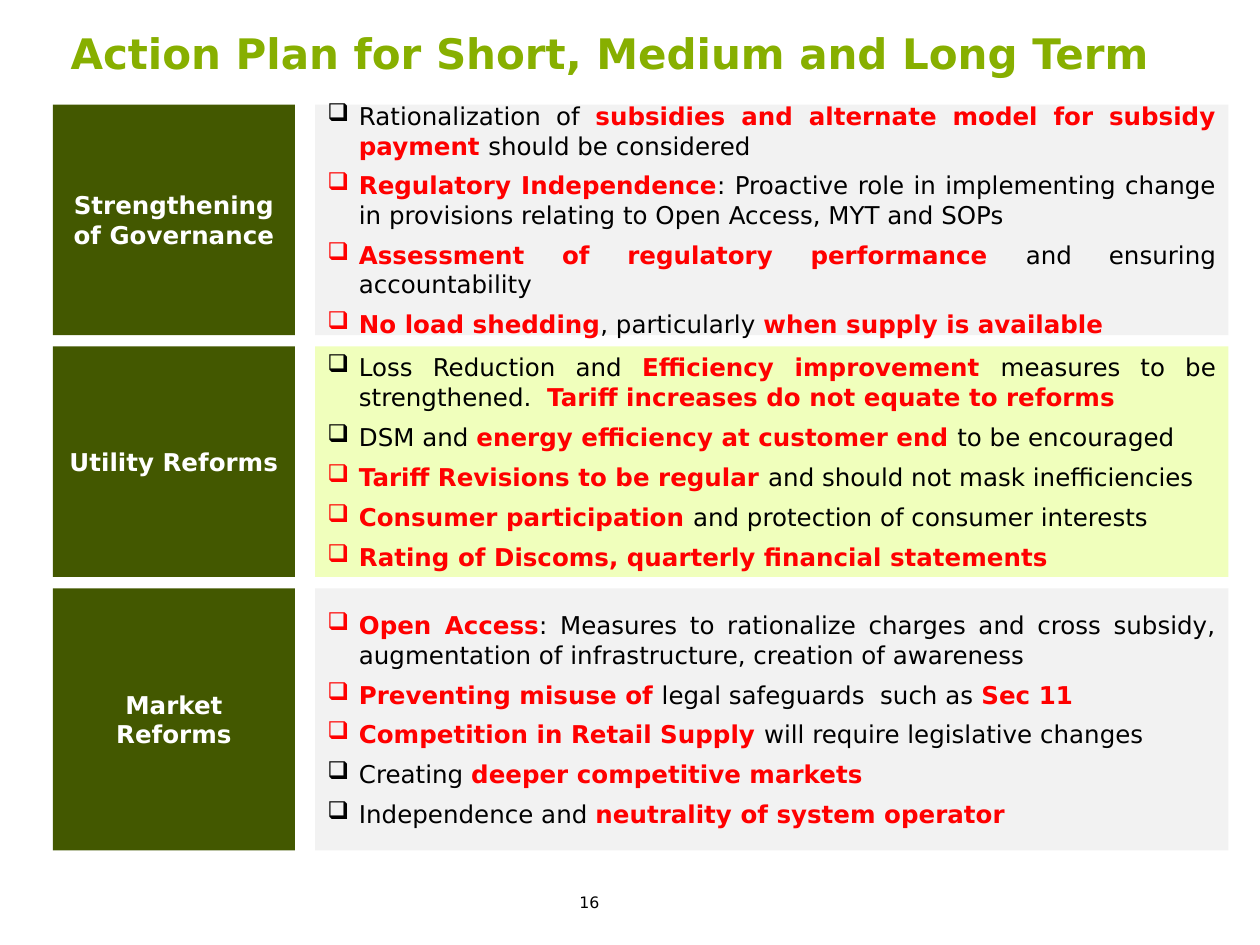
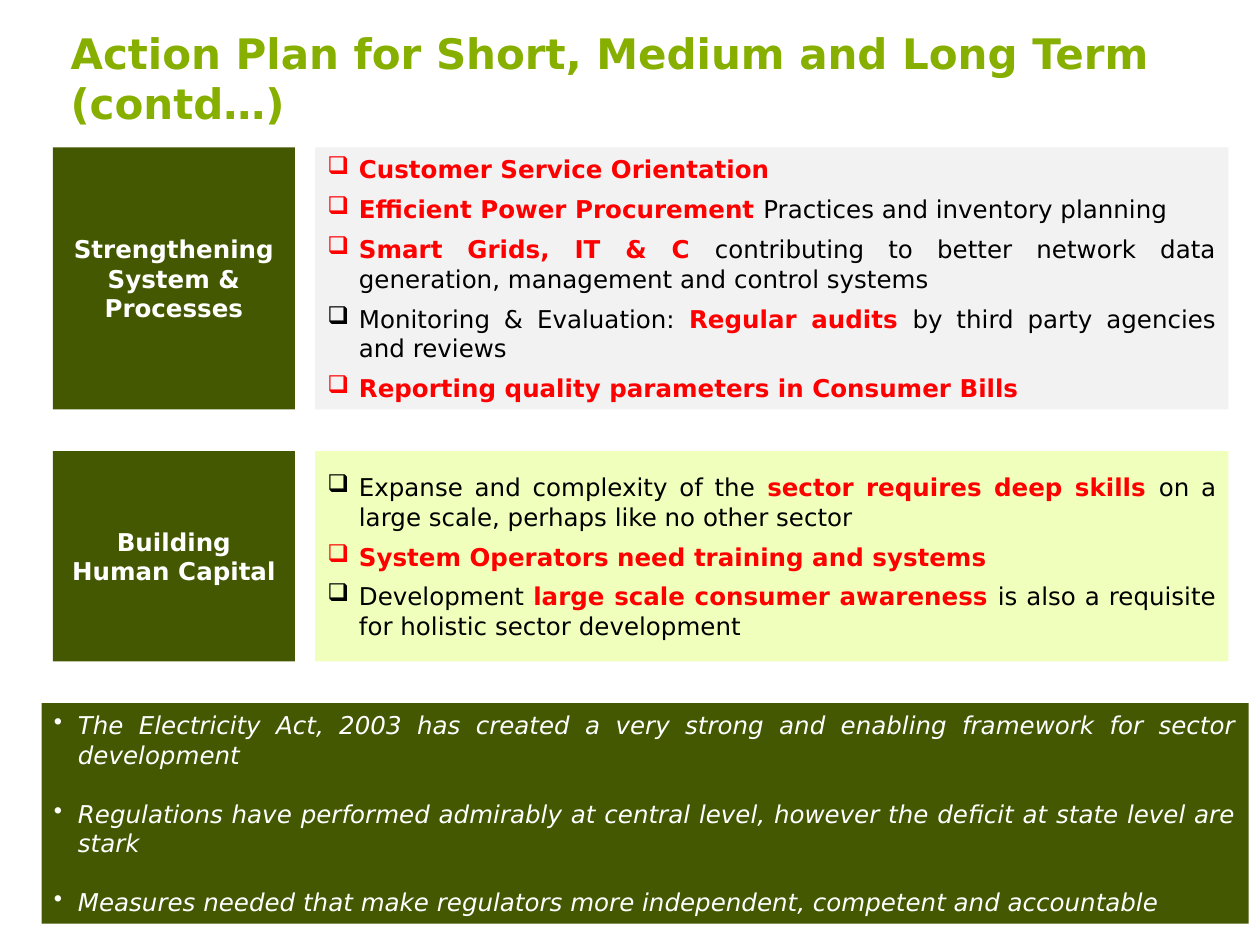
from dataclasses import dataclass

import lxml.etree
import pptx
import pptx.dml.color
import pptx.enum.shapes
import pptx.enum.text
import pptx.oxml.ns
import pptx.util

Inches = pptx.util.Inches
Pt = pptx.util.Pt
Align = pptx.enum.text.PP_ALIGN


@dataclass(frozen=True)
class Theme:
    font: str = "DejaVu Sans"
    title_size: int = 24
    body_size: int = 14
    number_size: int = 9
    title: str = "87AF00"
    dark: str = "435800"
    bands: tuple = ("F2F2F2", "F0FFBC")
    text: str = "000000"
    emphasis: str = "FF0000"
    light: str = "FFFFFF"


THEME = Theme()
TITLE = "Action Plan for Short, Medium and Long Term"

# Each row: heading, height, points; asterisks enclose emphasised words
REFORM_ROWS = [
    ("Strengthening of Governance", 1.83, [
        "Rationalization of *subsidies and alternate model for subsidy payment *"
        "should be considered",
        "*Regulatory Independence*: Proactive role in implementing change in "
        "provisions relating to Open Access, MYT and SOPs",
        "*Assessment of regulatory performance *and ensuring accountability",
        "*No load shedding*, particularly *when supply is available*",
    ]),
    ("Utility Reforms", 1.83, [
        "Loss Reduction and *Efficiency improvement *measures to be "
        "strengthened.  *Tariff increases do not equate to reforms*",
        "DSM and *energy efficiency at customer end *to be encouraged",
        "*Tariff Revisions to be regular *and should not mask inefficiencies",
        "*Consumer participation *and protection of consumer interests",
        "*Rating of Discoms, quarterly financial statements*",
    ]),
    ("Market Reforms", 2.08, [
        "*Open Access*: Measures to rationalize charges and cross subsidy, "
        "augmentation of infrastructure, creation of awareness",
        "*Preventing misuse of *legal safeguards  such as *Sec 11*",
        "*Competition in Retail Supply *will require legislative changes",
        "Creating *deeper competitive markets*",
        "Independence and *neutrality of system operator*",
    ]),
]
CAPACITY_ROWS = [
    ("Strengthening System & Processes", 2.08, [
        "*Customer Service Orientation*",
        "*Efficient Power Procurement *Practices and inventory planning",
        "*Smart Grids, IT & C *contributing to better network data generation, "
        "management and control systems",
        "Monitoring & Evaluation: *Regular audits *by third party agencies and reviews",
        "*Reporting quality parameters in Consumer Bills*",
    ]),
    ("Building Human Capital", 1.67, [
        "Expanse and complexity of the *sector requires deep skills *on a large "
        "scale, perhaps like no other sector",
        "*System Operators need training and systems*",
        "Development *large scale consumer awareness *is also a requisite for "
        "holistic sector development",
    ]),
]
CONCLUSIONS = [
    "The Electricity Act, 2003 has created a very strong and enabling framework "
    "for sector development",
    "Regulations have performed admirably at central level, however the deficit "
    "at state level are stark",
    "Measures needed that make regulators more independent, competent and accountable",
]


def add_run(paragraph, text, size, color, bold=False, italic=False):
    run = paragraph.add_run()
    run.text = text
    run.font.name = THEME.font
    run.font.size = Pt(size)
    run.font.bold = bold
    run.font.italic = italic
    run.font.color.rgb = pptx.dml.color.RGBColor.from_string(color)


def add_text_box(slide, left, top, width, height):
    text_box = slide.shapes.add_textbox(
        Inches(left), Inches(top), Inches(width), Inches(height))
    text_box.text_frame.word_wrap = True
    return text_box.text_frame


def add_panel(slide, left, top, width, height, fill):
    """Add a plain filled rectangle and return its text frame."""
    shape = slide.shapes.add_shape(
        pptx.enum.shapes.MSO_SHAPE.RECTANGLE,
        Inches(left), Inches(top), Inches(width), Inches(height))
    shape.shadow.inherit = False
    shape.fill.solid()
    shape.fill.fore_color.rgb = pptx.dml.color.RGBColor.from_string(fill)
    shape.line.fill.background()
    frame = shape.text_frame
    frame.word_wrap = True
    frame.vertical_anchor = pptx.enum.text.MSO_ANCHOR.MIDDLE
    return frame


def add_bullets(frame, items, symbol, indent):
    """Yield a justified, bulleted paragraph with each item."""
    for index, item in enumerate(items):
        paragraph = frame.add_paragraph() if index else frame.paragraphs[0]
        paragraph.alignment = Align.JUSTIFY
        properties = paragraph._p.get_or_add_pPr()
        properties.set("marL", str(Inches(indent)))
        properties.set("indent", str(-Inches(indent)))
        bullet = lxml.etree.SubElement(properties, pptx.oxml.ns.qn("a:buChar"))
        bullet.set("char", symbol)
        yield paragraph, item


def add_title(slide, text):
    frame = add_text_box(slide, 0.42, 0.17, 9, 0.53)
    frame.margin_left = frame.margin_right = Inches(0.14)
    add_run(frame.paragraphs[0], text, THEME.title_size, THEME.title, bold=True)


def add_page_number(slide, number):
    frame = add_text_box(slide, 4.5, 7.04, 1.5, 0.33)
    add_run(frame.paragraphs[0], str(number), THEME.number_size, THEME.text)


def add_action_row(slide, left, top, height, heading, points, fill):
    # Heading on the left
    heading_frame = add_panel(slide, left, top, 1.92, height, THEME.dark)
    paragraph = heading_frame.paragraphs[0]
    paragraph.alignment = Align.CENTER
    add_run(paragraph, heading, THEME.body_size, THEME.light, bold=True)

    # Points on the right
    points_frame = add_panel(slide, left + 2.08, top, 7.25, height, fill)
    for paragraph, point in add_bullets(points_frame, points, "❑", 0.25):
        paragraph.space_after = Pt(6)
        for index, part in enumerate(point.split("*")):
            emphasised = index % 2 == 1
            if part:
                color = THEME.emphasis if emphasised else THEME.text
                add_run(paragraph, part, THEME.body_size, color, bold=emphasised)


def add_action_rows(slide, top, gap, rows):
    for index, (heading, height, points) in enumerate(rows):
        fill = THEME.bands[index % len(THEME.bands)]
        add_action_row(slide, 0.42, top, height, heading, points, fill)
        top += height + gap


def add_conclusions(slide, left, top, width, height):
    frame = add_panel(slide, left, top, width, height, THEME.dark)
    for paragraph, text in add_bullets(frame, CONCLUSIONS, "•", 0.19):
        if text != CONCLUSIONS[-1]:
            paragraph.space_after = Pt(16.8)
        add_run(paragraph, text, THEME.body_size, THEME.light, italic=True)


def add_action_slide(presentation, title, top, gap, rows):
    slide = presentation.slides.add_slide(presentation.slide_layouts[6])
    add_title(slide, title)
    add_action_rows(slide, top, gap, rows)
    return slide


def main():
    presentation = pptx.Presentation()
    presentation.slide_width = Inches(10)
    presentation.slide_height = Inches(7.5)

    # Governance, utilities and markets
    reforms = add_action_slide(presentation, TITLE, 0.83, 0.09, REFORM_ROWS)
    add_page_number(reforms, 16)

    # Systems, people and conclusions
    capacity = add_action_slide(
        presentation, f"{TITLE} (contd…)", 1.17, 0.33, CAPACITY_ROWS)
    add_conclusions(capacity, 0.33, 5.58, 9.58, 1.75)

    presentation.save("out.pptx")


if __name__ == "__main__":
    main()
